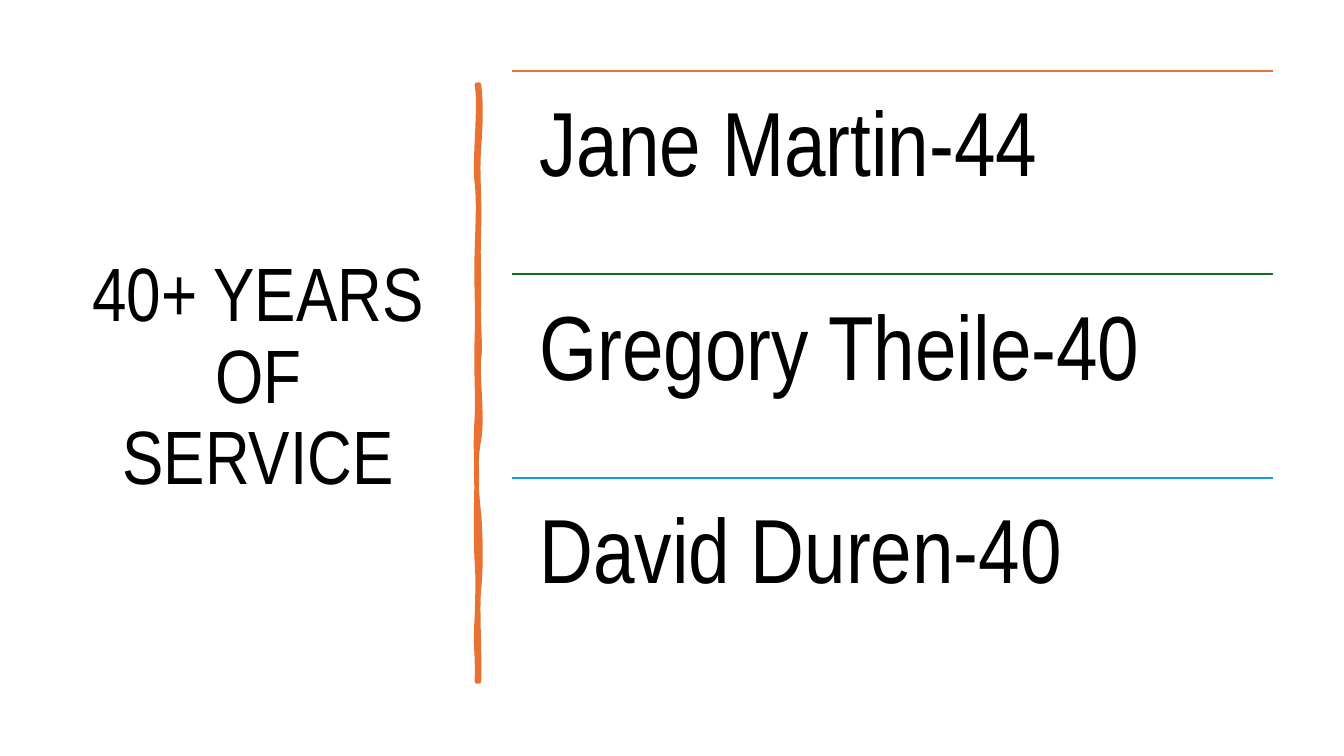
from lxml import etree
from pptx import Presentation, util as u
from pptx.dml.color import RGBColor
from pptx.enum import shapes, text
from pptx.oxml import ns

FONT = "Arial Narrow"
ORANGE, GREEN, BLUE, BLACK = "E97132", "196B24", "0F9ED5", "000000"
HONOREES = [("Jane Martin-44", ORANGE), ("Gregory Theile-40", GREEN), ("David Duren-40", BLUE)]
UNITS_PER_INCH = 1000
RULE_START = (0.02, 0)
RULE_CURVES = [
    ((0.04, 0.18), (0.04, 0.35), (0.02, 0.62)),
    ((0, 0.89), (0.03, 1.11), (0.02, 1.42)),
    ((0.01, 1.73), (0.02, 1.78), (0.02, 2.1)),
    ((0.01, 2.41), (0.04, 2.58), (0.02, 2.72)),
    ((0, 2.86), (0.06, 3.3), (0.02, 3.52)),
    ((-0.02, 3.73), (-0.01, 4), (0.02, 4.26)),
    ((0.04, 4.52), (0.04, 4.8), (0.02, 5)),
    ((0, 5.19), (0.03, 5.66), (0.02, 5.92)),
    ((0.01, 5.92), (0, 5.92), (0, 5.92)),
    ((0.01, 5.62), (-0.02, 5.6), (0, 5.29)),
    ((0.01, 4.99), (0.01, 4.86), (0, 4.73)),
    ((-0.01, 4.6), (-0.01, 4.11), (0, 3.93)),
    ((0, 3.75), (-0.02, 3.61), (0, 3.31)),
    ((0.01, 3.02), (-0.01, 2.89), (0, 2.51)),
    ((0.01, 2.14), (-0.01, 1.97), (0, 1.66)),
    ((0.01, 1.34), (0.02, 1.16), (0, 0.97)),
    ((-0.03, 0.79), (0.04, 0.2), (0, 0)),
    ((0.01, 0), (0.01, 0), (0.02, 0)),
]


def color(hex_string):
    """Turn a hex string into a colour."""
    return RGBColor.from_string(hex_string)


def add_label(page, area, words, size, inset=None, align=None, anchor=text.MSO_ANCHOR.TOP, after=0):
    """Write one wrapped paragraph in the given area."""
    box = page.shapes.add_textbox(*map(u.Inches, area))
    frame = box.text_frame
    frame.word_wrap = True
    frame.vertical_anchor = anchor
    if inset is not None:
        frame.margin_left = frame.margin_right = u.Inches(inset)
        frame.margin_top = frame.margin_bottom = u.Inches(inset)
    para = frame.paragraphs[0]
    para.alignment = align
    para.line_spacing = 0.9
    para.space_after = u.Pt(after)
    span = para.add_run()
    span.text = words
    span.font.name = FONT
    span.font.size = u.Pt(size)
    span.font.color.rgb = color(BLACK)


def add_title(page, area):
    """Place the centred heading."""
    add_label(page, area, "40+ YEARS OF SERVICE", 54,
              align=text.PP_ALIGN.CENTER, anchor=text.MSO_ANCHOR.MIDDLE)


def to_units(point):
    """Turn a point in inches into whole drawing units."""
    return tuple(round(value * UNITS_PER_INCH) for value in point)


def add_hand_drawn_rule(page, left, top):
    """Draw the wavy upright divider from its top left corner."""
    builder = page.shapes.build_freeform(*to_units(RULE_START), scale=u.Inches(1) / UNITS_PER_INCH)
    builder.add_line_segments([to_units(curve[-1]) for curve in RULE_CURVES], close=True)
    rule = builder.convert_to_shape(u.Inches(left), u.Inches(top))
    segments = list(rule._element.iter(ns.qn("a:lnTo")))
    for segment, curve in zip(segments, RULE_CURVES):
        bend = etree.Element(ns.qn("a:cubicBezTo"))
        for x, y in map(to_units, curve):
            etree.SubElement(bend, ns.qn("a:pt"), x=str(x), y=str(y))
        segment.getparent().replace(segment, bend)
    rule.shadow.inherit = False
    rule.fill.solid()
    rule.fill.fore_color.rgb = color(ORANGE)
    rule.line.color.rgb = color(ORANGE)
    rule.line.width = u.Pt(3.25)
    etree.SubElement(rule.line._get_or_add_ln(), ns.qn("a:round"))


def add_honorees(page, area):
    """Stack the names in equal rows, each under a coloured line."""
    left, top, width, height = area
    row = height / len(HONOREES)
    for index, (name, tint) in enumerate(HONOREES):
        y = top + index * row
        line = page.shapes.add_connector(
            shapes.MSO_CONNECTOR.STRAIGHT, *map(u.Inches, (left, y, left + width, y)))
        line.line.color.rgb = color(tint)
        line.line.width = u.Pt(1.5)
        etree.SubElement(line._element.spPr, ns.qn("a:effectLst"))
        add_label(page, (left, y, width, row), name, 65, inset=0.27, after=22.75)


def main():
    """Build and save the deck."""
    deck = Presentation()
    deck.slide_width, deck.slide_height = u.Inches(13.33), u.Inches(7.5)
    page = deck.slides.add_slide(deck.slide_layouts[6])
    add_title(page, (0.69, 0.7, 3.74, 6.11))
    add_hand_drawn_rule(page, 4.73, 0.84)
    add_honorees(page, (5.08, 0.7, 7.55, 6.06))
    deck.save("out.pptx")


if __name__ == "__main__":
    main()
